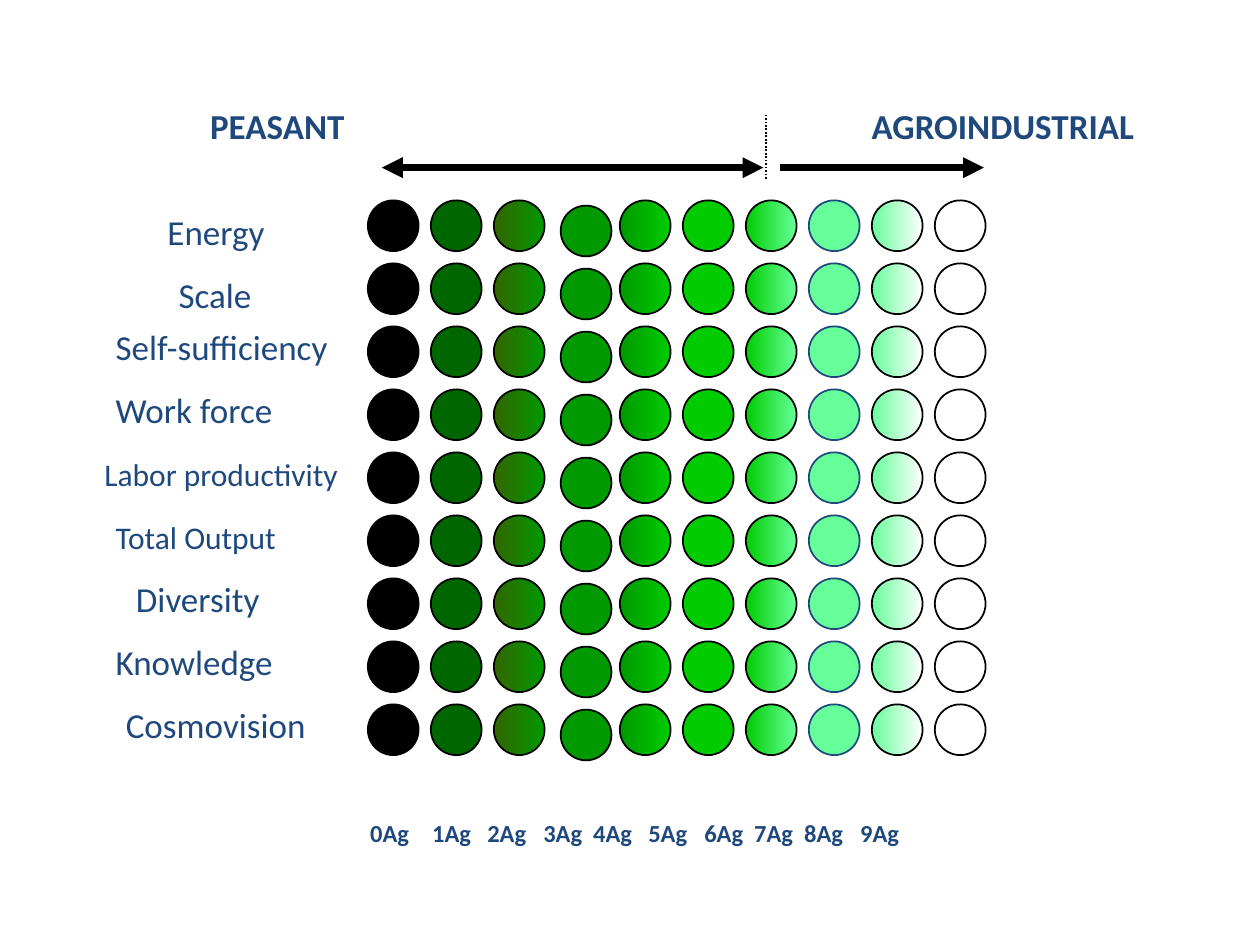
from dataclasses import dataclass

from lxml.etree import SubElement
from pptx import Presentation
from pptx.dml.color import RGBColor
from pptx.enum.dml import MSO_LINE
from pptx.enum.shapes import MSO_CONNECTOR, MSO_SHAPE
from pptx.enum.text import MSO_AUTO_SIZE
from pptx.oxml.ns import qn
from pptx.util import Pt


@dataclass(frozen=True)
class Theme:
    """Hold the colours, font and type sizes of the slide."""

    font: str = "Calibri"
    navy: str = "1F497D"
    black: str = "000000"
    white: str = "FFFFFF"
    forest: str = "006600"
    olive: str = "336600"
    green: str = "009900"
    bright: str = "00CC00"
    mint: str = "66FF99"
    large: int = 20
    medium: int = 18
    small: int = 14


THEME = Theme()
GRID_LEFT, GRID_TOP, PITCH, DIAMETER = 210.2, 114.5, 36, 29
COLUMNS = [
    (THEME.black,),
    (THEME.forest,),
    (THEME.olive, THEME.green),
    (THEME.green,),
    (THEME.green, THEME.bright),
    (THEME.bright,),
    (THEME.bright, THEME.mint),
    (THEME.mint,),
    (THEME.mint, THEME.white),
    (THEME.white,),
]
COLUMN_SHIFTS = {3: (2.2, 3)}
COLUMN_OUTLINES = {7: THEME.navy}
CRITERIA = [
    ("Energy", 88.6, 116.6, 77.8, THEME.large),
    ("Scale", 95, 152.6, 64, THEME.large),
    ("Self-sufficiency", 59, 182.2, 149, THEME.large),
    ("Work force", 59, 218.2, 114.5, THEME.large),
    ("Labor productivity", 52.6, 256.3, 156.2, THEME.medium),
    ("Total Output", 59, 292.3, 113, THEME.medium),
    ("Diversity", 70.6, 326.2, 90.7, THEME.large),
    ("Knowledge", 59, 362.2, 113, THEME.large),
    ("Cosmovision", 64.8, 398.2, 128.9, THEME.large),
]
SCALE_TABS = [35.4, 66.9, 98.9, 127.4, 158.9, 190.9, 219.4, 248, 280]


def add_text(slide, text, left, top, width, size=THEME.large, bold=False, wrap=False, tabs=()):
    """Add a one-line text box with optional tab stops."""
    shape = slide.shapes.add_textbox(Pt(left), Pt(top), Pt(width), Pt(size * 1.2 + 7.2))
    frame = shape.text_frame
    frame.word_wrap = wrap
    frame.auto_size = MSO_AUTO_SIZE.SHAPE_TO_FIT_TEXT
    paragraph = frame.paragraphs[0]
    run = paragraph.add_run()
    run.text = text
    run.font.name = THEME.font
    run.font.size = Pt(size)
    run.font.bold = bold
    run.font.color.rgb = RGBColor.from_string(THEME.navy)
    if tabs:
        tab_list = SubElement(paragraph._p.get_or_add_pPr(), qn("a:tabLst"))
        for position in tabs:
            SubElement(tab_list, qn("a:tab"), pos=str(int(Pt(position))), algn="l")


def add_line(slide, start, end, width, dash=None, heads=()):
    """Add a straight black line with the named arrowhead ends."""
    connector = slide.shapes.add_connector(MSO_CONNECTOR.STRAIGHT, *map(Pt, start + end))
    connector.line.color.rgb = RGBColor.from_string(THEME.black)
    connector.line.width = Pt(width)
    if dash:
        connector.line.dash_style = dash
    for head in heads:
        SubElement(connector.line._get_or_add_ln(), qn(f"a:{head}"), type="triangle")
    SubElement(connector._element.spPr, qn("a:effectLst"))


def add_circle(shapes, left, top, colors, outline):
    """Add a circle with a solid or left-to-right gradient fill."""
    shape = shapes.add_shape(MSO_SHAPE.OVAL, Pt(left), Pt(top), Pt(DIAMETER), Pt(DIAMETER))
    shape.shadow.inherit = False
    if len(colors) == 1:
        shape.fill.solid()
        shape.fill.fore_color.rgb = RGBColor.from_string(colors[0])
    else:
        shape.fill.gradient()
        shape.fill.gradient_angle = 0
        for stop, color in zip(shape.fill.gradient_stops, colors):
            stop.color.rgb = RGBColor.from_string(color)
    shape.line.color.rgb = RGBColor.from_string(outline)
    shape.line.width = Pt(1)


def add_circle_column(slide, column, colors):
    """Add one grouped column of circles, one for each criterion."""
    group = slide.shapes.add_group_shape()
    shift_x, shift_y = COLUMN_SHIFTS.get(column, (0, 0))
    outline = COLUMN_OUTLINES.get(column, THEME.black)
    left = GRID_LEFT + column * PITCH + shift_x
    for row in range(len(CRITERIA)):
        add_circle(group.shapes, left, GRID_TOP + row * PITCH + shift_y, colors, outline)


def main():
    """Build the slide and save it."""
    presentation = Presentation()
    presentation.slide_width, presentation.slide_height = Pt(720), Pt(540)
    slide = presentation.slides.add_slide(presentation.slide_layouts[6])

    add_text(slide, "PEASANT", 113, 56.2, 110.2, bold=True)
    add_text(slide, "AGROINDUSTRIAL", 491, 56.2, 195.8, bold=True)
    add_line(slide, (218.2, 95.8), (436.3, 95.8), 4, heads=("headEnd", "tailEnd"))
    add_line(slide, (445.7, 95.8), (562.3, 95.8), 4, heads=("tailEnd",))
    add_line(slide, (437.8, 102.2), (437.8, 65.5), 1, dash=MSO_LINE.ROUND_DOT)

    for column, colors in enumerate(COLUMNS):
        add_circle_column(slide, column, colors)
    for text, left, top, width, size in CRITERIA:
        add_text(slide, text, left, top, width, size=size)

    scale = "\t".join(f"{step}Ag" for step in range(len(COLUMNS)))
    add_text(slide, scale, 204.5, 463.7, 378.7, size=THEME.small, bold=True, wrap=True, tabs=SCALE_TABS)
    presentation.save("out.pptx")


if __name__ == "__main__":
    main()
